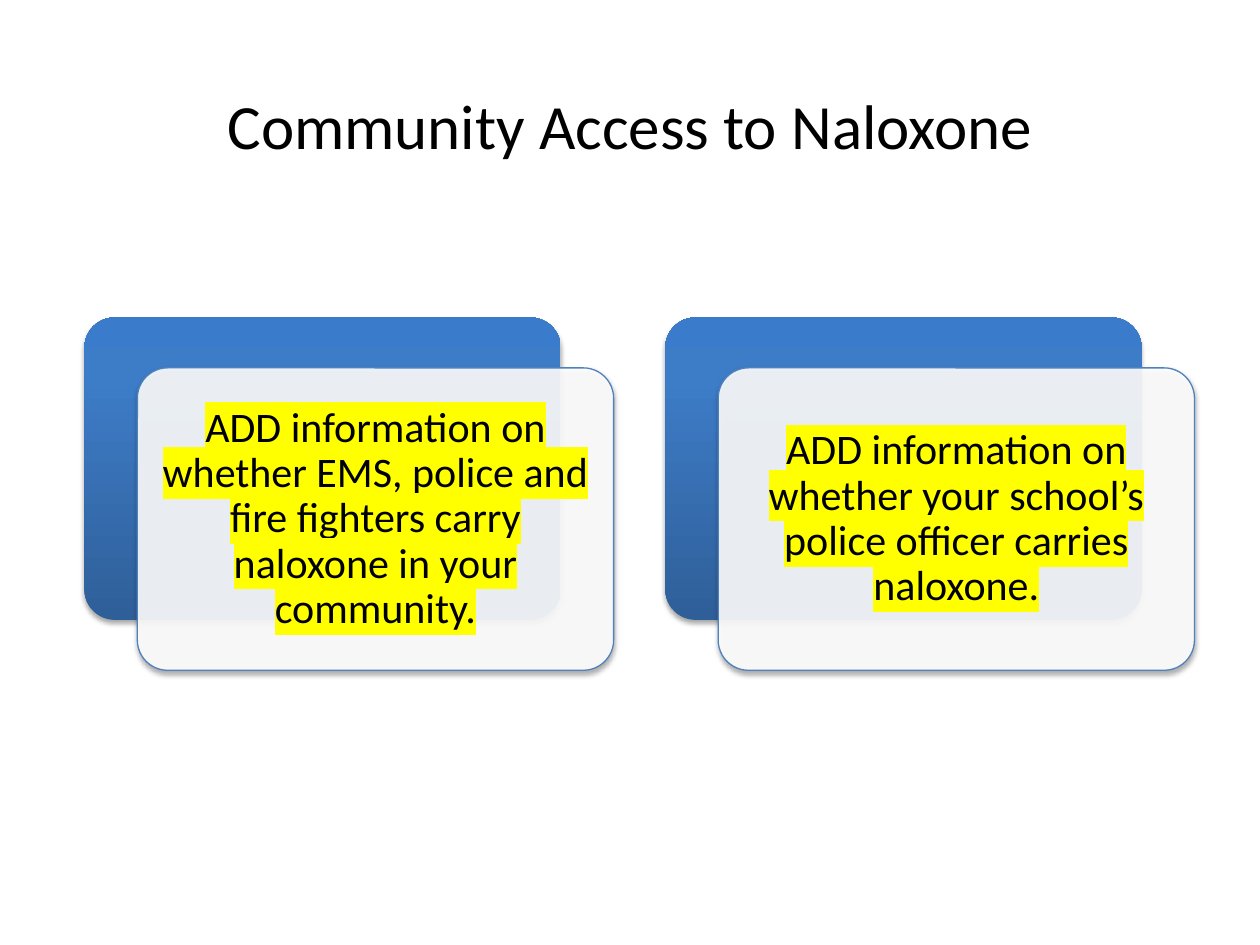
from dataclasses import dataclass

from lxml import etree
from pptx import Presentation
from pptx.dml.color import RGBColor
from pptx.enum import shapes, text
from pptx.oxml import ns
from pptx.util import Inches, Pt


@dataclass(frozen=True)
class Theme:
    font: str = "Calibri"
    ink: str = "000000"
    paper: str = "FFFFFF"
    outline: str = "4F81BD"
    highlight: str = "FFFF00"
    gradient: tuple = ((0, "2F5F99"), (80, "3D7CC7"), (100, "3A7CCB"))
    title_size: int = 36
    body_size: int = 24


@dataclass(frozen=True)
class Box:
    left: float
    top: float
    width: float
    height: float

    def lengths(self):
        return [Inches(n) for n in (self.left, self.top, self.width, self.height)]

    def shifted(self, right, down):
        return Box(self.left + right, self.top + down, self.width, self.height)

    def inset(self, gap):
        return Box(self.left + gap, self.top + gap,
                   self.width - 2 * gap, self.height - 2 * gap)


THEME = Theme()
TITLE_BOX = Box(0, 0.38, 10, 1.21)
CARD = Box(0.67, 2.52, 3.78, 2.4)
CARD_PITCH = 4.61
FRONT_SHIFT = (0.42, 0.4)
TEXT_INSET = 0.07
MESSAGES = (
    "ADD information on whether EMS, police and fire fighters carry "
    "naloxone in your community.",
    "ADD information on whether your school’s police officer carries naloxone.",
)


def add_node(parent, tag, **attributes):
    node = etree.SubElement(parent, ns.qn(tag))
    for name, value in attributes.items():
        node.set(name, str(value))
    return node


def write_text(frame, words, size, highlight=None, line_spacing=None):
    frame.word_wrap = True
    frame.vertical_anchor = text.MSO_ANCHOR.MIDDLE
    para = frame.paragraphs[0]
    para.alignment = text.PP_ALIGN.CENTER
    if line_spacing:
        para.line_spacing = line_spacing
    span = para.add_run()
    span.text = words
    span.font.size = Pt(size)
    span.font.color.rgb = RGBColor.from_string(THEME.ink)
    if highlight:
        properties = span.font._element
        mark = add_node(properties, "a:highlight")
        add_node(mark, "a:srgbClr", val=highlight)
        properties.find(ns.qn("a:solidFill")).addnext(mark)
    span.font.name = THEME.font


def add_panel(group, box):
    panel = group.shapes.add_shape(
        shapes.MSO_SHAPE.ROUNDED_RECTANGLE, *box.lengths())
    panel.adjustments[0] = 0.1
    panel.shadow.inherit = False
    effects = panel._element.spPr.find(ns.qn("a:effectLst"))
    shadow = add_node(effects, "a:outerShdw", blurRad=Pt(3.1), dist=Pt(1.8),
                      dir=90 * 60000, rotWithShape=0)
    color = add_node(shadow, "a:srgbClr", val="000000")
    add_node(color, "a:alpha", val=35000)
    return panel


def fill_gradient(panel):
    panel.fill.gradient()
    gradient = panel._element.spPr.find(ns.qn("a:gradFill"))
    stops = gradient.find(ns.qn("a:gsLst"))
    for stop in list(stops):
        stops.remove(stop)
    for position, color in THEME.gradient:
        stop = add_node(stops, "a:gs", pos=position * 1000)
        add_node(stop, "a:srgbClr", val=color)
    gradient.find(ns.qn("a:lin")).set("ang", str(270 * 60000))


def add_card(group, box, words):
    back = add_panel(group, box)
    fill_gradient(back)
    back.line.fill.background()

    front_box = box.shifted(*FRONT_SHIFT)
    front = add_panel(group, front_box)
    front.fill.solid()
    front.fill.fore_color.rgb = RGBColor.from_string(THEME.paper)
    color = front._element.spPr.find(ns.qn("a:solidFill"))[0]
    add_node(color, "a:alpha", val=90000)
    front.line.color.rgb = RGBColor.from_string(THEME.outline)
    front.line.width = Pt(0.75)

    label = group.shapes.add_textbox(*front_box.inset(TEXT_INSET).lengths())
    frame = label.text_frame
    frame.margin_left = frame.margin_right = Inches(0.1)
    frame.margin_top = frame.margin_bottom = Inches(0.1)
    write_text(frame, words, THEME.body_size, THEME.highlight, 0.9)


def add_title(page, box, words):
    title = page.shapes.title
    title.left, title.top, title.width, title.height = box.lengths()
    write_text(title.text_frame, words, THEME.title_size)


def add_cards(page, box, messages):
    group = page.shapes.add_group_shape()
    for index, words in enumerate(messages):
        add_card(group, box.shifted(index * CARD_PITCH, 0), words)


def main():
    deck = Presentation()
    deck.slide_width, deck.slide_height = Inches(10), Inches(7.5)
    page = deck.slides.add_slide(deck.slide_layouts.get_by_name("Title Only"))
    add_title(page, TITLE_BOX, "Community Access to Naloxone")
    add_cards(page, CARD, MESSAGES)
    deck.save("out.pptx")


if __name__ == "__main__":
    main()
